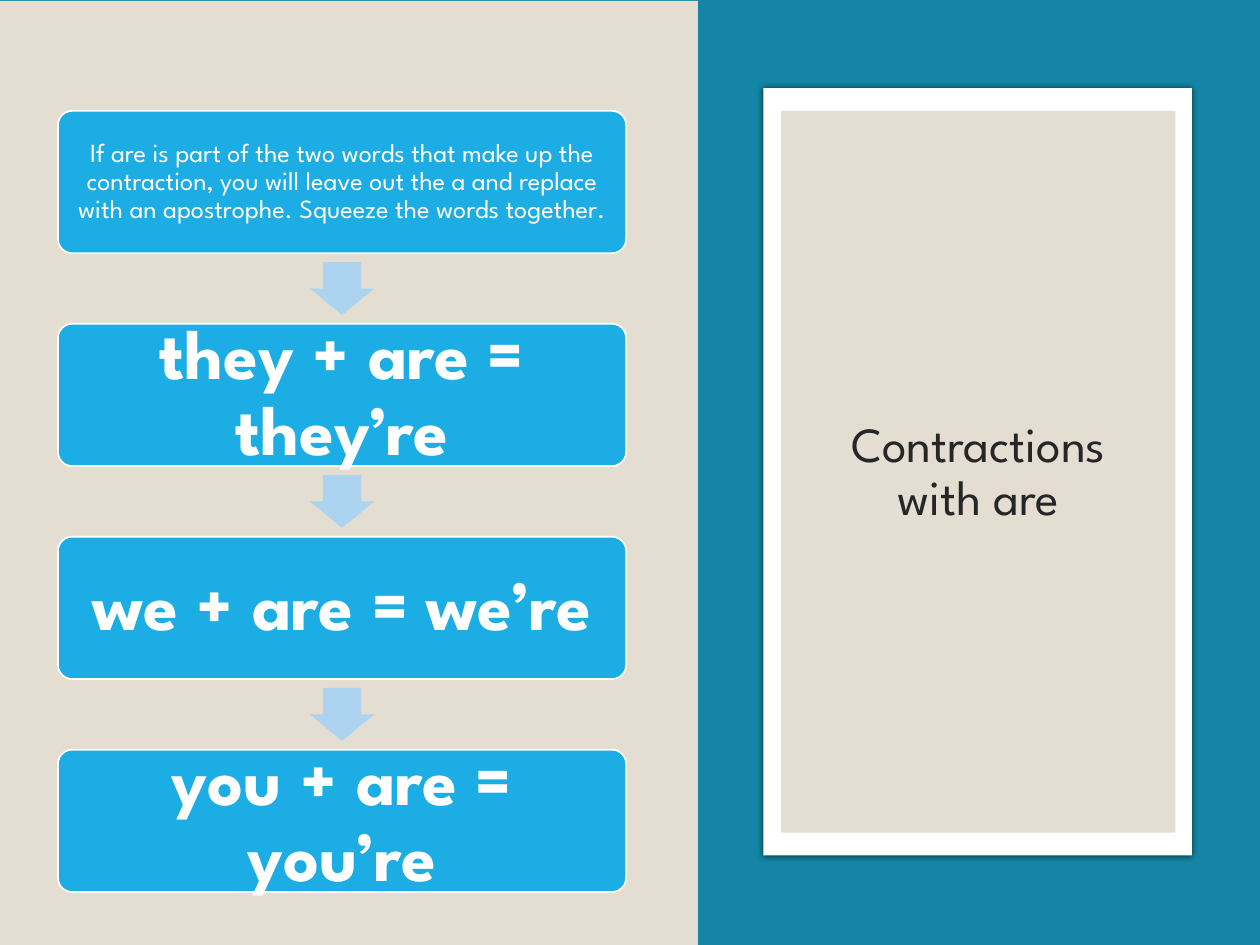
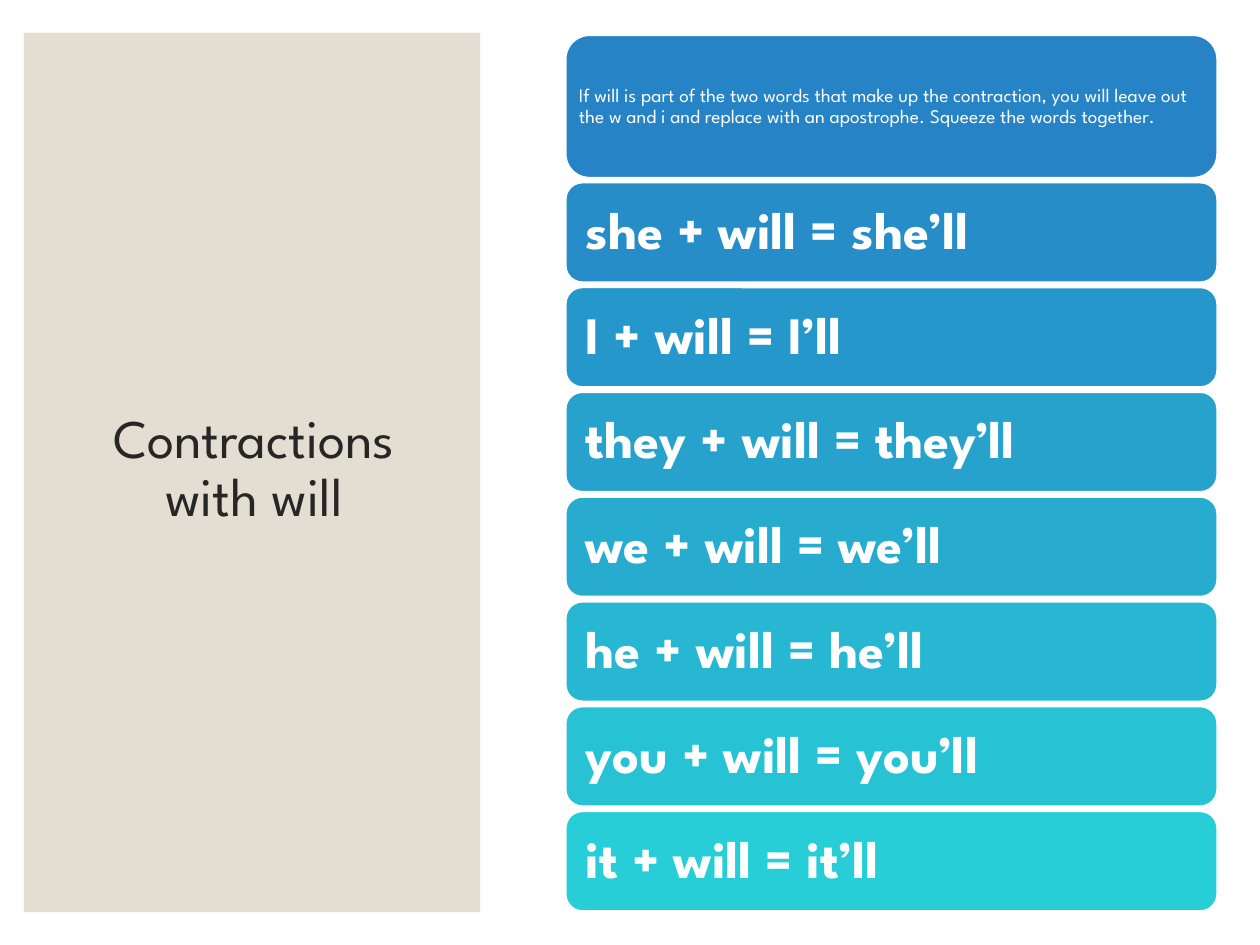
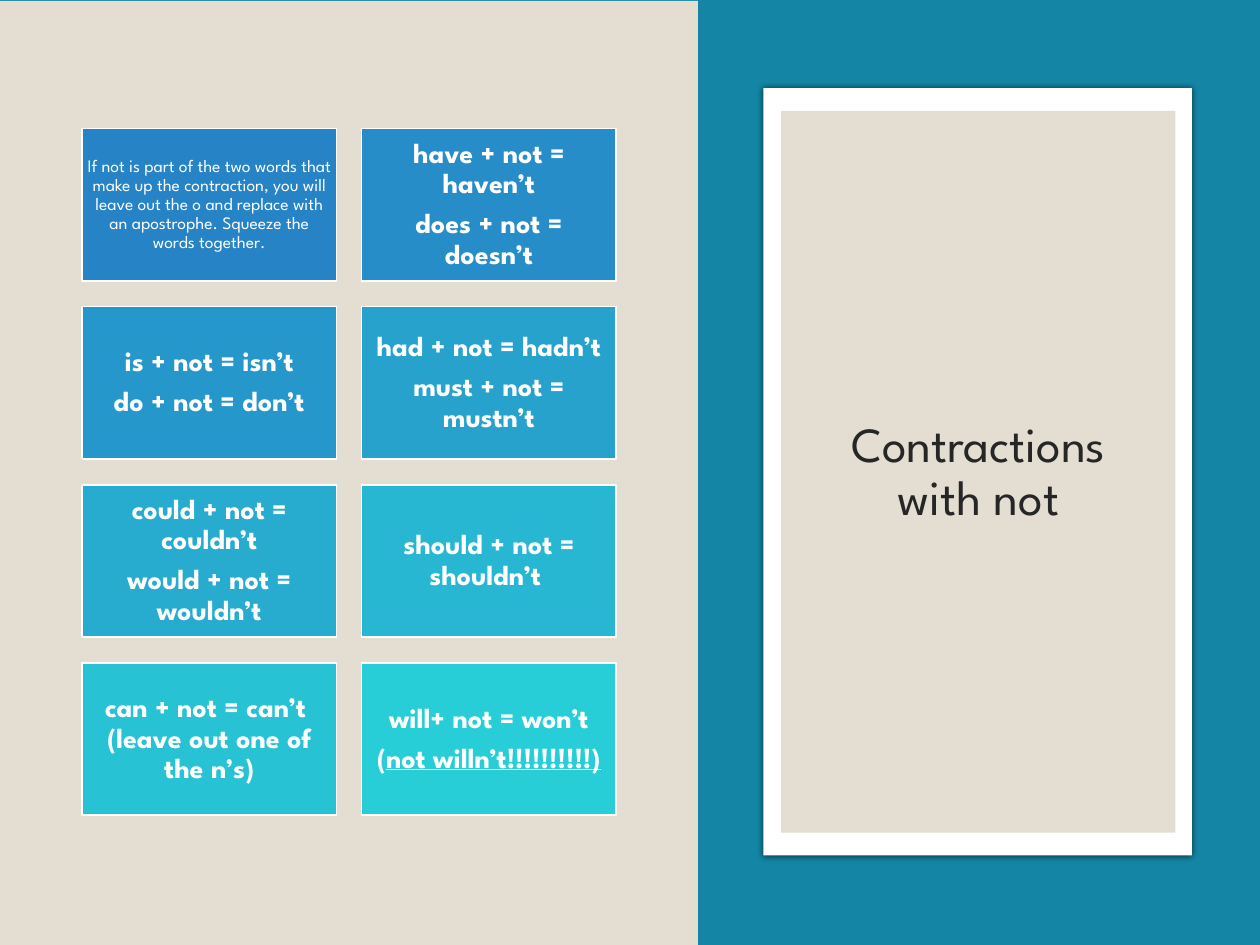
from colorsys import hls_to_rgb, rgb_to_hls
from dataclasses import dataclass

from lxml.etree import SubElement
from pptx import Presentation
from pptx.dml.color import RGBColor
from pptx.enum.shapes import MSO_SHAPE as Preset
from pptx.enum.text import MSO_ANCHOR as Anchor, MSO_AUTO_SIZE as AutoSize, PP_ALIGN as Align
from pptx.oxml.ns import qn
from pptx.util import Inches, Pt

WIDTH, HEIGHT = Inches(10), Inches(7.5)
TITLE_ONLY = 5


@dataclass(frozen=True)
class Theme:
    font: str = "League Spartan"
    sand: str = "E3DED1"
    teal: str = "1485A4"
    white: str = "FFFFFF"
    ink: str = "262626"
    sky: str = "1CADE4"
    arrow: str = "ACD3EF"
    ramp_start: str = "2683C6"
    ramp_end: str = "27CED7"
    line_spacing: float = 0.9
    space_after: float = 0.35  # share of the type size
    title_narrow: int = 28
    title_wide: int = 31


THEME = Theme()


@dataclass(frozen=True)
class Box:
    """An area in percent of the slide's width and height."""
    left: float
    top: float
    width: float
    height: float

    def place(self) -> tuple[int, int, int, int]:
        return (int(WIDTH * self.left / 100), int(HEIGHT * self.top / 100),
                int(WIDTH * self.width / 100), int(HEIGHT * self.height / 100))


@dataclass(frozen=True)
class Grid:
    area: Box
    columns: int
    rows: int
    column_gap: float
    row_gap: float

    def cell(self, index: int) -> Box:
        row, column = divmod(index, self.columns)
        width = (self.area.width - (self.columns - 1) * self.column_gap) / self.columns
        height = (self.area.height - (self.rows - 1) * self.row_gap) / self.rows
        return Box(self.area.left + column * (width + self.column_gap),
                   self.area.top + row * (height + self.row_gap), width, height)


@dataclass(frozen=True)
class TextStyle:
    size: int
    inset: float
    bold: bool = True
    alignment: Align = Align.CENTER


@dataclass(frozen=True)
class Card:
    lines: tuple[str, ...]
    underlined: str = ""  # tail of the last line


# Shared drawing
def color_ramp(count: int) -> list[str]:
    """Blend the two ramp colours by hue, lightness and saturation."""
    start, end = (rgb_to_hls(*(part / 255 for part in RGBColor.from_string(color)))
                  for color in (THEME.ramp_start, THEME.ramp_end))
    blends = ([a + (b - a) * step / (count - 1) for a, b in zip(start, end)]
              for step in range(count))
    return ["".join(f"{round(part * 255):02X}" for part in hls_to_rgb(*blend))
            for blend in blends]


def add_panel(slide, box: Box, fill: str, preset=Preset.RECTANGLE, outlined: bool = False):
    shape = slide.shapes.add_shape(preset, *box.place())
    shape.shadow.inherit = False
    shape.fill.solid()
    shape.fill.fore_color.rgb = RGBColor.from_string(fill)
    if outlined:
        shape.line.color.rgb = RGBColor.from_string(THEME.white)
        shape.line.width = Pt(1)
    else:
        shape.line.fill.background()
    return shape


def add_glow(shape) -> None:
    effects = shape.element.spPr.find(qn("a:effectLst"))
    shadow = SubElement(effects, qn("a:outerShdw"), blurRad=str(Pt(4)), dist="0")
    color = SubElement(shadow, qn("a:srgbClr"), val="000000")
    SubElement(color, qn("a:alpha"), val="66000")


def format_paragraph(paragraph, size: int, color: str, bold: bool, alignment: Align) -> None:
    paragraph.alignment = alignment
    paragraph.line_spacing = THEME.line_spacing
    font = paragraph.font
    font.name, font.size, font.bold = THEME.font, Pt(size), bold
    font.color.rgb = RGBColor.from_string(color)


def add_card(slide, box: Box, card: Card, style: TextStyle, fill: str,
             preset=Preset.RECTANGLE, corner: float | None = None) -> None:
    shape = add_panel(slide, box, fill, preset, outlined=True)
    if corner is not None:
        shape.adjustments[0] = corner
    frame = shape.text_frame
    frame.word_wrap = True
    frame.vertical_anchor = Anchor.MIDDLE
    frame.margin_left = frame.margin_right = Inches(style.inset)
    frame.margin_top = frame.margin_bottom = Inches(style.inset)
    for index, line in enumerate(card.lines):
        paragraph = frame.add_paragraph() if index else frame.paragraphs[0]
        paragraph.text = line
        format_paragraph(paragraph, style.size, THEME.white, style.bold, style.alignment)
        paragraph.space_after = Pt(style.size * THEME.space_after)
    if card.underlined:
        run = paragraph.add_run()
        run.text = card.underlined
        run.font.underline = True


def add_slide(presentation, background: str):
    slide = presentation.slides.add_slide(presentation.slide_layouts[TITLE_ONLY])
    slide.background.fill.solid()
    slide.background.fill.fore_color.rgb = RGBColor.from_string(background)
    return slide


def set_title(slide, text: str, box: Box, size: int) -> None:
    title = slide.shapes.title
    title.left, title.top, title.width, title.height = box.place()
    title.element.getparent().append(title.element)  # in front of the panels
    frame = title.text_frame
    frame.text = text
    frame.word_wrap = True
    frame.auto_size = AutoSize.NONE
    frame.vertical_anchor = Anchor.MIDDLE
    format_paragraph(frame.paragraphs[0], size, THEME.ink, False, Align.CENTER)


def add_framed_slide(presentation, title: str):
    """Sand on the left, a framed title on teal to the right."""
    slide = add_slide(presentation, THEME.sand)
    add_panel(slide, Box(0, 0, 100, 100), THEME.teal)
    add_panel(slide, Box(0, 0.1, 55.4, 99.9), THEME.sand)
    add_glow(add_panel(slide, Box(60.6, 9.33, 34, 81.2), THEME.white))
    add_panel(slide, Box(62, 11.73, 31.3, 76.4), THEME.sand)
    set_title(slide, title, Box(63.5, 17.33, 28.3, 65.47), THEME.title_narrow)
    return slide


# Slide 1: a chain of boxes joined by arrows
def build_are_slide(presentation) -> None:
    slide = add_framed_slide(presentation, "Contractions with are")
    rule = ("If are is part of the two words that make up the contraction, you will "
            "leave out the a and replace with an apostrophe. Squeeze the words together.")
    steps = (rule, "they + are = they’re", "we + are = we’re", "you + are = you’re")
    grid = Grid(Box(4.6, 11.73, 45.1, 82.67), 1, len(steps), 0, 7.47)
    arrow_width, arrow_height = 5.1, 5.6
    for index, step in enumerate(steps):
        box = grid.cell(index)
        style = TextStyle(40, 0.17) if index else TextStyle(15, 0.06, bold=False)
        add_card(slide, box, Card((step,)), style, THEME.sky, Preset.ROUNDED_RECTANGLE, 0.1)
        if index < len(steps) - 1:
            arrow = add_panel(slide, Box(box.left + (box.width - arrow_width) / 2,
                                         box.top + box.height + (grid.row_gap - arrow_height) / 2,
                                         arrow_width, arrow_height),
                              THEME.arrow, Preset.DOWN_ARROW)
            arrow.adjustments[0], arrow.adjustments[1] = 0.6, 0.5


# Slide 2: a rule above a list of bars
def build_will_slide(presentation) -> None:
    slide = add_slide(presentation, THEME.white)
    add_panel(slide, Box(1.9, 3.47, 36.2, 93.07), THEME.sand)
    set_title(slide, "Contractions with will", Box(4.7, 8.13, 30.9, 83.2), THEME.title_wide)
    rule = ("If will is part of the two words that make up the contraction, you will leave "
            "out the w and i and replace with an apostrophe. Squeeze the words together.")
    sums = ("she + will = she’ll", "I + will = I’ll", "they + will = they’ll",
            "we + will = we’ll", "he + will = he’ll", "you + will = you’ll",
            "it + will = it’ll")
    rule_color, *bar_colors = color_ramp(len(sums) + 1)
    add_card(slide, Box(44.9, 3.73, 51.7, 15.07), Card((rule,)),
             TextStyle(11, 0.05, False, Align.LEFT), rule_color, Preset.ROUNDED_RECTANGLE)
    grid = Grid(Box(44.9, 19.33, 51.7, 77.07), 1, len(sums), 0, 0.55)
    for index, (text, color) in enumerate(zip(sums, bar_colors)):
        add_card(slide, grid.cell(index), Card((text,)),
                 TextStyle(30, 0.12, alignment=Align.LEFT), color, Preset.ROUNDED_RECTANGLE)


# Slide 3: a grid of cards
def build_not_slide(presentation) -> None:
    slide = add_framed_slide(presentation, "Contractions with not")
    rule = ("If not is part of the two words that make up the contraction, you will "
            "leave out the o and replace with an apostrophe. Squeeze the words together.")
    cards = (
        Card((rule,)),
        Card(("have + not = haven’t", "does + not = doesn’t")),
        Card(("is + not = isn’t", "do + not = don’t")),
        Card(("had + not = hadn’t", "must + not = mustn’t")),
        Card(("could + not = couldn’t", "would + not = wouldn’t")),
        Card(("should + not = shouldn’t ",)),
        Card(("can + not = can’t \n(leave out one of the n’s)",)),
        Card(("will+ not = won’t", "("), underlined="not willn’t!!!!!!!!!!)"),
    )
    grid = Grid(Box(6.5, 13.6, 42.4, 72.67), 2, 4, 2, 2.71)
    for index, (card, color) in enumerate(zip(cards, color_ramp(len(cards)))):
        style = TextStyle(16, 0.07) if index else TextStyle(10, 0.04, bold=False)
        add_card(slide, grid.cell(index), card, style, color)


def main() -> None:
    presentation = Presentation()
    presentation.slide_width, presentation.slide_height = WIDTH, HEIGHT
    build_are_slide(presentation)
    build_will_slide(presentation)
    build_not_slide(presentation)
    presentation.save("out.pptx")


if __name__ == "__main__":
    main()
